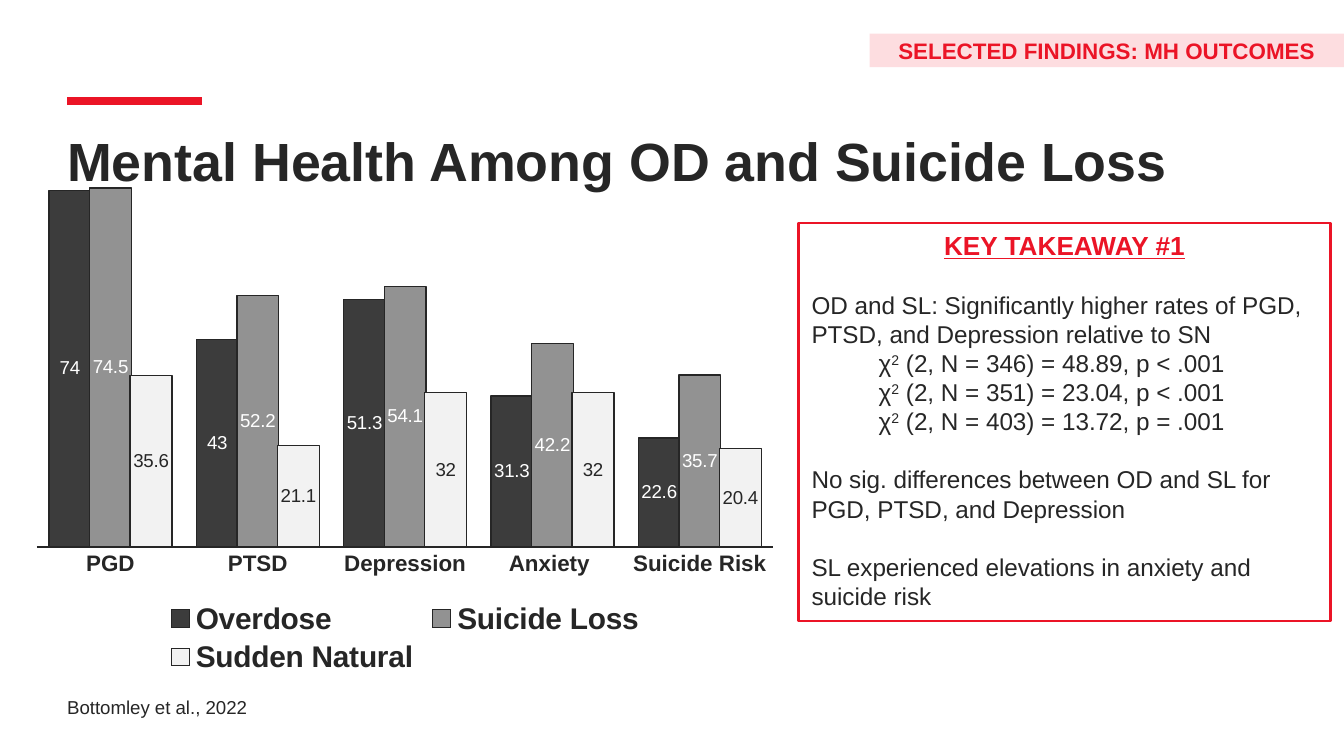
from lxml.etree import SubElement
from pptx import Presentation
from pptx.chart.data import CategoryChartData
from pptx.dml.color import RGBColor
from pptx.enum.chart import XL_CHART_TYPE, XL_LABEL_POSITION, XL_LEGEND_POSITION, XL_TICK_LABEL_POSITION, XL_TICK_MARK
from pptx.enum.shapes import MSO_CONNECTOR, MSO_SHAPE
from pptx.enum.text import MSO_ANCHOR, PP_ALIGN
from pptx.oxml.ns import qn
from pptx.util import Inches, Pt

COLORS = {name: RGBColor.from_string(value) for name, value in {
    "red": "EB1426", "pink": "FDDDE0", "ink": "262626", "white": "FFFFFF",
    "dark": "3C3C3C", "gray": "929292", "pale": "F2F2F2"}.items()}

# A 16:9 slide
presentation = Presentation()
presentation.slide_width = Inches(10)
presentation.slide_height = Inches(10) * 9 // 16
slide = presentation.slides.add_slide(presentation.slide_layouts[6])


def share(*percents):
    """Turn percentages of slide width and height, in turn, into lengths."""
    sides = (presentation.slide_width, presentation.slide_height)
    return [int(sides[i % 2] * percent / 100) for i, percent in enumerate(percents)]


def style_font(font, size, color="ink", **values):
    for name, value in {"name": "Arial", "size": Pt(size), **values}.items():
        setattr(font, name, value)
    font.color.rgb = COLORS[color]


# Accent line above the title
accent = slide.shapes.add_connector(MSO_CONNECTOR.STRAIGHT, *share(5, 13.35, 15, 13.35))
accent.line.color.rgb = COLORS["red"]
accent.line.width = Pt(4)
SubElement(accent._element.spPr, qn("a:effectLst"))

# Chart
chart_data = CategoryChartData()
chart_data.categories = ["PGD", "PTSD", "Depression", "Anxiety ", "Suicide Risk"]
chart_data.add_series("Overdose ", [74, 43, 51.3, 31.3, 22.6])
chart_data.add_series("Suicide Loss", [74.5, 52.2, 54.1, 42.2, 35.7])
chart_data.add_series("Sudden Natural", [35.6, 21.1, 32, 32, 20.4])
chart = slide.shapes.add_chart(
    XL_CHART_TYPE.COLUMN_CLUSTERED, *share(1.6, 19.95, 57.1, 69.9), chart_data).chart
style_font(chart.font, 10)
chart.has_title = False
chart.has_legend = True
chart.legend.position = XL_LEGEND_POSITION.BOTTOM
chart.legend.include_in_layout = False
style_font(chart.legend.font, 16, bold=True)

value_axis = chart.value_axis
for name, value in {"minimum_scale": 0, "maximum_scale": 80, "major_tick_mark": XL_TICK_MARK.NONE,
                    "has_major_gridlines": False, "visible": False}.items():
    setattr(value_axis, name, value)
category_axis = chart.category_axis
category_axis.major_tick_mark = XL_TICK_MARK.NONE
category_axis.tick_label_position = XL_TICK_LABEL_POSITION.NEXT_TO_AXIS
category_axis.format.line.color.rgb = COLORS["ink"]
category_axis.format.line.width = Pt(0)
style_font(category_axis.tick_labels.font, 12, bold=True)

plot = chart.plots[0]
plot.gap_width, plot.overlap, plot.vary_by_categories = 58, 3, False
for series, fill, label in zip(plot.series, ("dark", "gray", "pale"), ("white", "white", "ink")):
    series.format.fill.solid()
    series.format.fill.fore_color.rgb = COLORS[fill]
    series.format.line.color.rgb = COLORS["ink"]
    series.format.line.width = Pt(0.75)
    series.data_labels.show_value = True
    series.data_labels.position = XL_LABEL_POSITION.CENTER
    style_font(series.data_labels.font, 10, label)

# Plot area placed as shares of the chart
plot_area = chart._chartSpace.chart.plotArea
for old_layout in plot_area.findall(qn("c:layout")):
    plot_area.remove(old_layout)
layout = SubElement(plot_area, qn("c:layout"))
plot_area.insert(0, layout)
manual = SubElement(layout, qn("c:manualLayout"))
for tag, value in {"layoutTarget": "inner", "xMode": "edge", "yMode": "edge",
                   "x": 0.02, "y": 0.02, "w": 0.96, "h": 0.73}.items():
    SubElement(manual, qn(f"c:{tag}")).set("val", str(value))

# Title, section tag and citation: text, place, anchor, fill, paragraph format, font
labels = [
    ("Mental Health Among OD and Suicide Loss", (5, 15.5, 90, 10), MSO_ANCHOR.TOP, None,
     {"line_spacing": Pt(40)}, {"size": 28.8, "bold": True}),
    ("SELECTED FINDINGS: MH OUTCOMES", (64.7, 4.45, 35.3, 4.45), MSO_ANCHOR.MIDDLE, "pink",
     {"alignment": PP_ALIGN.CENTER}, {"size": 12, "color": "red", "bold": True}),
    ("Bottomley et al., 2022", (5, 85.2, 65, 9.8), MSO_ANCHOR.BOTTOM, None,
     {"line_spacing": Pt(12), "space_after": Pt(3)}, {"size": 10}),
]
for text, place, anchor, fill, paragraph_format, font_format in labels:
    shape = slide.shapes.add_textbox(*share(*place))
    if fill:
        shape.fill.solid()
        shape.fill.fore_color.rgb = COLORS[fill]
    frame = shape.text_frame
    for name, value in {"margin_left": 0, "margin_right": 0, "margin_top": 0, "margin_bottom": 0,
                        "word_wrap": True, "vertical_anchor": anchor}.items():
        setattr(frame, name, value)
    paragraph = frame.paragraphs[0]
    for name, value in paragraph_format.items():
        setattr(paragraph, name, value)
    run = paragraph.add_run()
    run.text = text
    style_font(run.font, **font_format)

# Takeaway box
takeaway = slide.shapes.add_shape(MSO_SHAPE.RECTANGLE, *share(59.4, 29.5, 39.6, 52.65))
takeaway.shadow.inherit = False
takeaway.fill.background()
takeaway.line.color.rgb = COLORS["red"]
takeaway.line.width = Pt(1.5)
frame = takeaway.text_frame
frame.word_wrap, frame.vertical_anchor = True, MSO_ANCHOR.TOP
heading = frame.paragraphs[0]
heading.alignment = PP_ALIGN.CENTER
run = heading.add_run()
run.text = "KEY TAKEAWAY #1"
style_font(run.font, 14, "red", bold=True, underline=True)

# Findings, each with the chi-squared tests that support it
findings = [
    ("OD and SL: Significantly higher rates of PGD, PTSD, and Depression relative to SN",
     ["(2, N = 346) = 48.89, p < .001", "(2, N = 351) = 23.04, p < .001",
      "(2, N = 403) = 13.72, p = .001"]),
    ("No sig. differences between OD and SL for PGD, PTSD, and Depression", []),
    ("SL experienced elevations in anxiety and suicide risk", []),
]
for finding, tests in findings:
    for parts in [[finding]] + [["χ", "2", f" {test}"] for test in tests]:
        paragraph = frame.add_paragraph()
        paragraph.alignment = PP_ALIGN.LEFT
        if len(parts) == 1:
            paragraph.space_before = Pt(15.5)
        else:
            paragraph.level = 1
            paragraph._p.get_or_add_pPr().set("marL", str(Inches(0.5)))
        for part in parts:
            run = paragraph.add_run()
            run.text = part
            style_font(run.font, 13)
            if part == "2":
                run._r.get_or_add_rPr().set("baseline", "30000")

presentation.save("out.pptx")
